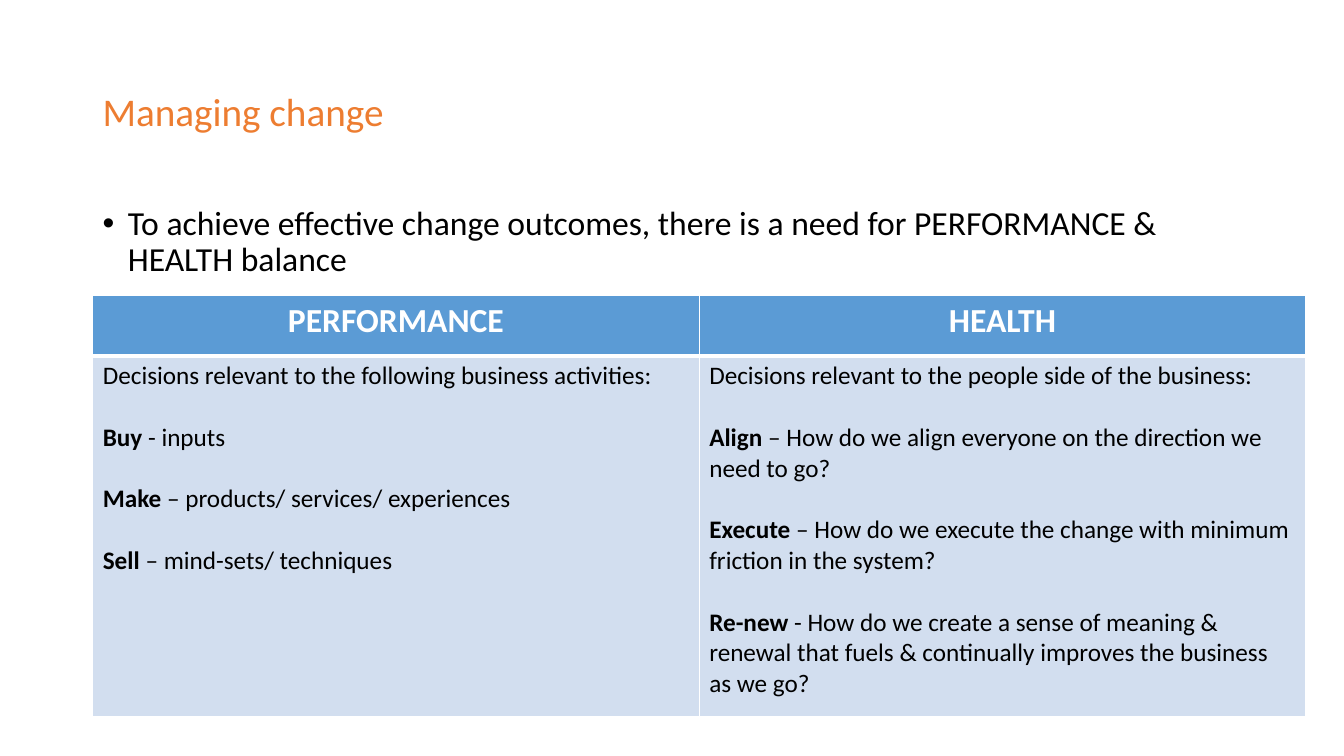
"""Builds the slide on balancing performance and health in change."""
from lxml.etree import SubElement as Sub
from pptx import Presentation
from pptx.dml.color import RGBColor as RGB
from pptx.enum.text import MSO_ANCHOR as Anchor, PP_ALIGN as Align
from pptx.oxml.ns import qn
from pptx.util import Inches, Pt

ORANGE = RGB(0xED, 0x7D, 0x31)
BLACK = RGB(0, 0, 0)
WHITE = RGB(0xFF, 0xFF, 0xFF)
BLUE = RGB(0x5B, 0x9B, 0xD5)
PALE = RGB(0xD2, 0xDE, 0xEF)

TITLE = "Managing change"
POINT = ("To achieve effective change outcomes, there is a need for "
         "PERFORMANCE & HEALTH balance")
COLUMNS = [
    ("PERFORMANCE", [
        ("", "Decisions relevant to the following business activities:"),
        ("Buy", " - inputs"),
        ("Make", " – products/ services/ experiences"),
        ("Sell", " – mind-sets/ techniques"),
    ]),
    ("HEALTH", [
        ("", "Decisions relevant to the people side of the business:"),
        ("Align", " – How do we align everyone on the direction we need to go?"),
        ("Execute", " – How do we execute the change with minimum friction "
                    "in the system?"),
        ("Re-new", " - How do we create a sense of meaning & renewal that fuels "
                   "& continually improves the business as we go?"),
    ]),
]

LEFT = 0.92
BOXES = {"title": (LEFT, 0.4, 11.5, 1.45), "point": (LEFT, 2, 11.5, 0.9)}
GRID = (LEFT, 2.93, 12.03, 4.18)
ROWS = (0.6, 3.58)
HEAD = {"size": Pt(24), "bold": True, "color": WHITE}
TERM = {"size": Pt(18), "bold": True, "color": BLACK}
BODY = {"size": Pt(18), "bold": False, "color": BLACK}


def add_run(para, text, style):
    run = para.add_run()
    run.text = text
    run.font.name = "Calibri"
    for name, value in style.items():
        if name == "color":
            run.font.color.rgb = value
        else:
            setattr(run.font, name, value)


def add_box(slide, area, text, style, anchor):
    frame = slide.shapes.add_textbox(*map(Inches, area)).text_frame
    frame.word_wrap = True
    frame.vertical_anchor = anchor
    para = frame.paragraphs[0]
    para.line_spacing = 0.9
    add_run(para, text, style)
    return para


def add_bullet(para):
    para.space_before = Pt(10)
    props = para._p.get_or_add_pPr()
    props.set("marL", str(Inches(0.25)))
    props.set("indent", str(Inches(-0.25)))
    Sub(props, qn("a:buFont"), typeface="Arial")
    Sub(props, qn("a:buChar"), char="•")


def style_cell(cell, color, widths):
    props = cell._tc.get_or_add_tcPr()
    for side, width in zip("LRTB", widths):
        line = Sub(props, qn("a:ln" + side), w=str(Pt(width)))
        Sub(Sub(line, qn("a:solidFill")), qn("a:srgbClr"), val=str(WHITE))
    cell.fill.solid()
    cell.fill.fore_color.rgb = color


def fill_column(table, col, head, items):
    top, low = table.cell(0, col), table.cell(1, col)
    style_cell(top, BLUE, (1, 1, 1, 3))
    style_cell(low, PALE, (1, 1, 3, 1))
    para = top.text_frame.paragraphs[0]
    para.alignment = Align.CENTER
    add_run(para, head, HEAD)
    frame = low.text_frame
    for i, (term, text) in enumerate(items):
        para = frame.add_paragraph() if i else frame.paragraphs[0]
        if term:
            para.space_before = Pt(22)
            add_run(para, term, TERM)
        add_run(para, text, BODY)


def main():
    deck = Presentation()
    deck.slide_width, deck.slide_height = Inches(13.33), Inches(7.5)
    slide = deck.slides.add_slide(deck.slide_layouts[6])
    add_box(slide, BOXES["title"], TITLE,
            {"size": Pt(28), "color": ORANGE}, Anchor.MIDDLE)
    add_bullet(add_box(slide, BOXES["point"], POINT,
                       {"size": Pt(24), "color": BLACK}, Anchor.TOP))
    table = slide.shapes.add_table(
        len(ROWS), len(COLUMNS), *map(Inches, GRID)).table
    for row, height in zip(table.rows, ROWS):
        row.height = Inches(height)
    for col, (head, items) in enumerate(COLUMNS):
        fill_column(table, col, head, items)
    deck.save("out.pptx")


if __name__ == "__main__":
    main()
